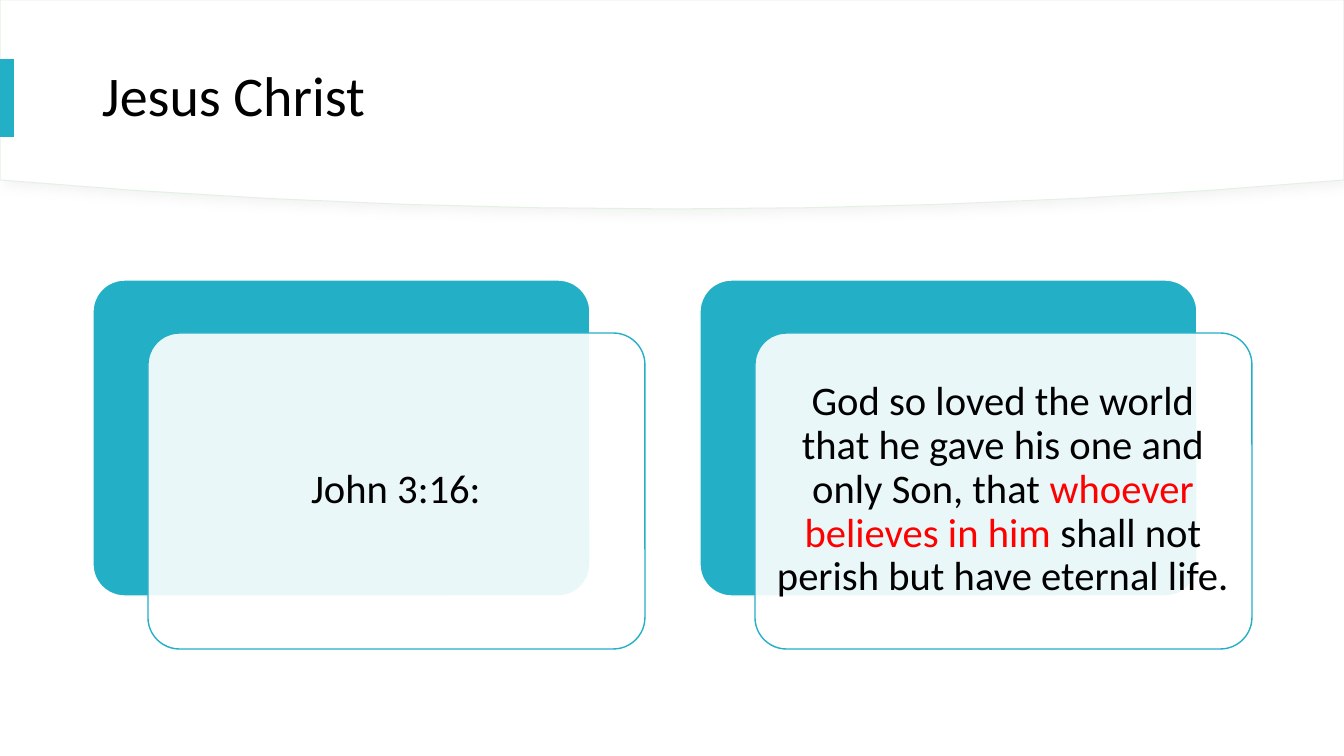
from lxml.etree import SubElement
from pptx import Presentation
from pptx.dml.color import RGBColor
from pptx.enum.shapes import MSO_SHAPE
from pptx.enum.text import MSO_ANCHOR, PP_ALIGN
from pptx.oxml.ns import qn
from pptx.util import Pt

TITLE = [("Jesus Christ", "000000")]
CARDS = [
    [("John 3:16:", "000000")],
    [
        ("God so loved the world that he gave his one and only Son, that ", "000000"),
        ("whoever believes in him ", "FF0000"),
        ("shall not perish but have eternal life.", "000000"),
    ],
]
FONT, TEAL, WHITE, PALE = "Calibri", "23B0C6", "FFFFFF", "E5F0E4"
WIDTH, HEIGHT = 1344, 756
LEFT, TOP, PITCH = 93, 280, 607
CARD_W, CARD_H = 497, 316
EDGE, SAG, STEPS = 180, 29, 10


def px(n):
    return round(n * 914400 / 100.8)


def color(code):
    return RGBColor.from_string(code)


def paint(shape, fill, line=None, width=1):
    shape.shadow.inherit = False
    shape.fill.solid()
    shape.fill.fore_color.rgb = color(fill)
    if line:
        shape.line.color.rgb = color(line)
        shape.line.width = Pt(width)
    else:
        shape.line.fill.background()


def fade(node, percent):
    SubElement(node, qn("a:alpha"), val=str(percent * 1000))


def block(kind, left, top, width, height, *style):
    shape = slide.shapes.add_shape(kind, px(left), px(top), px(width), px(height))
    paint(shape, *style)
    return shape


def card(left, top, *style):
    shape = block(MSO_SHAPE.ROUNDED_RECTANGLE, left, top, CARD_W, CARD_H, *style)
    shape.adjustments[0] = 0.1
    return shape


def write(left, top, width, height, runs, size, align, inset):
    box = slide.shapes.add_textbox(px(left), px(top), px(width), px(height))
    frame = box.text_frame
    frame.word_wrap = True
    frame.vertical_anchor = MSO_ANCHOR.MIDDLE
    frame.margin_left = frame.margin_right = px(inset)
    frame.margin_top = frame.margin_bottom = px(inset)
    para = frame.paragraphs[0]
    para.alignment = align
    para.line_spacing = 0.9
    para.font.size = Pt(size)
    para.font.name = FONT
    for text, tone in runs:
        run = para.add_run()
        run.text = text
        run.font.color.rgb = color(tone)


def banner():
    curve = []
    for i in range(STEPS + 1):
        t = 1 - 2 * i / STEPS
        curve.append((px(WIDTH * (1 + t) / 2), px(EDGE + SAG * (1 - t * t))))
    pen = slide.shapes.build_freeform(0, 0)
    pen.add_line_segments([(px(WIDTH), 0)] + curve, close=True)
    shape = pen.convert_to_shape()
    paint(shape, WHITE, PALE, 0.75)
    effects = shape.element.spPr.find(qn("a:effectLst"))
    shade = SubElement(effects, qn("a:outerShdw"), blurRad=str(Pt(8)),
                       dist=str(Pt(3)), dir=str(45 * 60000), rotWithShape="0")
    fade(SubElement(shade, qn("a:srgbClr"), val="D9D9D9"), 30)


deck = Presentation()
deck.slide_width, deck.slide_height = px(WIDTH), px(HEIGHT)
slide = deck.slides.add_slide(deck.slide_layouts[6])

banner()
write(LEFT, 28, 1159, 140, TITLE, 40, PP_ALIGN.LEFT, 9)
block(MSO_SHAPE.RECTANGLE, 0, 59, 14, 78, TEAL)

for i, runs in enumerate(CARDS):
    left = LEFT + i * PITCH
    card(left, TOP, TEAL, WHITE)
    front = card(left + 55, TOP + 53, WHITE, TEAL)
    fade(front.element.spPr.find(qn("a:solidFill"))[0], 90)
    write(left + 64, TOP + 61, CARD_W - 19, CARD_H - 18, runs, 29, PP_ALIGN.CENTER, 12)

deck.save("out.pptx")
